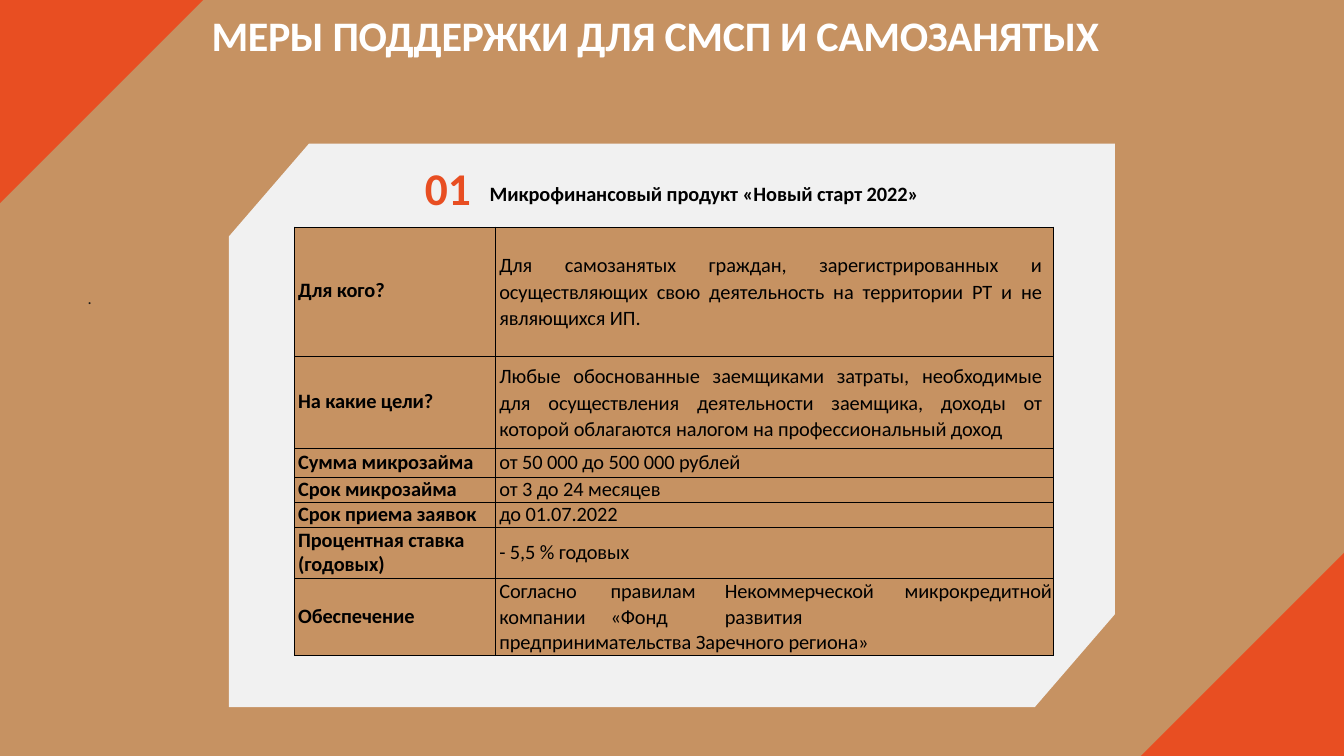
import pptx
import pptx.util
import pptx.dml.color
import pptx.enum.text
import lxml.etree
from dataclasses import dataclass
from pptx.oxml.ns import qn

Cm, Pt = pptx.util.Cm, pptx.util.Pt
ALIGN = pptx.enum.text.PP_ALIGN
MIDDLE = pptx.enum.text.MSO_ANCHOR.MIDDLE


@dataclass(frozen=True)
class Theme:
    sand: str = "C69262"
    flame: str = "E84E22"
    panel: str = "F1F1F1"
    white: str = "FFFFFF"
    black: str = "000000"
    dark: str = "1D1D1B"
    font: str = "Calibri"
    title: float = 49.5
    number: float = 53.5
    body: float = 24
    small: float = 19.5


THEME = Theme()
WIDTH, HEIGHT = 55.85, 31.42
CORNER = 8.44
PANEL = (9.51, 5.97, 46.33, 29.39)
CUT = (3.33, 3.86)

COLS = (8.36, 23.19)
LOOSE = {"line": 1.07, "align": ALIGN.JUSTIFY, "right": 0.5}
TIGHT = {"line": Pt(28.1)}
FUND = {"line": Pt(30), "tabs": (4.62, 9.37, 16.84)}
ROWS = (
    (5.36, "Для кого?",
     "Для самозанятых граждан, зарегистрированных и осуществляющих свою "
     "деятельность на территории РТ и не являющихся ИП.", LOOSE),
    (3.86, "На какие цели?",
     "Любые обоснованные заемщиками затраты, необходимые для осуществления "
     "деятельности заемщика, доходы от которой облагаются налогом на "
     "профессиональный доход", LOOSE),
    (1.19, "Сумма микрозайма", "от 50 000 до 500 000 рублей", TIGHT),
    (1.04, "Срок микрозайма", "от 3 до 24 месяцев", TIGHT),
    (1.04, "Срок приема заявок", "до 01.07.2022", TIGHT),
    (2.13, "Процентная ставка\n(годовых)", "- 5,5 % годовых", TIGHT),
    (3.2, "Обеспечение",
     "Согласно\tправилам\tНекоммерческой\tмикрокредитной\n"
     "компании\t«Фонд\tразвития\n"
     "предпринимательства Заречного региона»", FUND),
)


def rgb(code):
    return pptx.dml.color.RGBColor.from_string(code)


def assign(target, values):
    for name, value in values.items():
        setattr(target, name, value)


def write(frame, text, size, color, bold=False, line=1.0, align=ALIGN.LEFT,
          tabs=(), track=-10):
    """Fill a text frame, one paragraph for each line of text."""
    for i, words in enumerate(text.split("\n")):
        para = frame.add_paragraph() if i else frame.paragraphs[0]
        assign(para, {"line_spacing": line, "alignment": align})
        if tabs:
            stops = lxml.etree.SubElement(para._p.get_or_add_pPr(), qn("a:tabLst"))
            for stop in tabs:
                lxml.etree.SubElement(stops, qn("a:tab"), pos=str(Cm(stop)), algn="l")
        run = para.add_run()
        run.text = words
        assign(run.font, {"name": THEME.font, "size": Pt(size), "bold": bold})
        run.font.color.rgb = rgb(color)
        run._r.get_or_add_rPr().set("spc", str(track))


def label(slide, box, text, size, color, **style):
    frame = slide.shapes.add_textbox(*map(Cm, box)).text_frame
    assign(frame, {"word_wrap": True, "margin_left": Cm(0.03), "margin_right": 0,
                   "margin_top": Cm(0.06), "margin_bottom": 0})
    write(frame, text, size, color, **style)


def outline(slide, points, color):
    first, *rest = [(Cm(x), Cm(y)) for x, y in points]
    form = slide.shapes.build_freeform(*first)
    form.add_line_segments(rest, close=True)
    shape = form.convert_to_shape()
    shape.shadow.inherit = False
    shape.fill.solid()
    shape.fill.fore_color.rgb = rgb(color)
    shape.line.fill.background()


def border(cell):
    props = cell._tc.get_or_add_tcPr()
    for side in ("lnL", "lnR", "lnT", "lnB"):
        edge = lxml.etree.SubElement(props, qn("a:" + side), w=str(Pt(1)))
        fill = lxml.etree.SubElement(edge, qn("a:solidFill"))
        lxml.etree.SubElement(fill, qn("a:srgbClr"), val=THEME.black)


def fill_cell(cell, text, right=0, **style):
    border(cell)
    cell.fill.solid()
    cell.fill.fore_color.rgb = rgb(THEME.sand)
    assign(cell, {"margin_left": Cm(0.15), "margin_right": Cm(right), "margin_top": 0,
                  "margin_bottom": 0, "vertical_anchor": MIDDLE})
    write(cell.text_frame, text, THEME.body, THEME.black, **style)


def add_terms(slide):
    """Add the table of loan terms."""
    high = sum(row[0] for row in ROWS)
    box = map(Cm, (12.24, 9.43, sum(COLS), high))
    table = slide.shapes.add_table(len(ROWS), len(COLS), *box).table
    assign(table, {"first_row": False, "horz_banding": False})
    for col, width in zip(table.columns, COLS):
        col.width = Cm(width)
    for i, (height, term, value, style) in enumerate(ROWS):
        table.rows[i].height = Cm(height)
        fill_cell(table.cell(i, 0), term, bold=True, line=Pt(28.1))
        fill_cell(table.cell(i, 1), value, **style)


def main():
    deck = pptx.Presentation()
    assign(deck, {"slide_width": Cm(WIDTH), "slide_height": Cm(HEIGHT)})
    slide = deck.slides.add_slide(deck.slide_layouts[6])
    slide.background.fill.solid()
    slide.background.fill.fore_color.rgb = rgb(THEME.sand)

    outline(slide, [(0, 0), (CORNER, 0), (0, CORNER)], THEME.flame)
    outline(slide, [(WIDTH, HEIGHT), (WIDTH - CORNER, HEIGHT),
                    (WIDTH, HEIGHT - CORNER)], THEME.flame)
    label(slide, (8.76, 0.33, 39, 2.16), "МЕРЫ ПОДДЕРЖКИ ДЛЯ СМСП И САМОЗАНЯТЫХ",
          THEME.title, THEME.white, bold=True, track=-35)

    left, top, right, low = PANEL
    dx, dy = CUT
    outline(slide, [(right, top), (left + dx, top), (left, top + dy), (left, low),
                    (right - dx, low), (right, low - dy)], THEME.panel)
    label(slide, (17.63, 6.58, 2.2, 2.34), "01", THEME.number, THEME.flame, bold=True)
    label(slide, (20.32, 7.47, 18.44, 1.09), "Микрофинансовый продукт «Новый старт 2022»",
          THEME.body, THEME.black, bold=True)
    label(slide, (3.61, 11.89, 0.5, 0.89), ".", THEME.small, THEME.dark)
    add_terms(slide)
    deck.save("out.pptx")


if __name__ == "__main__":
    main()
